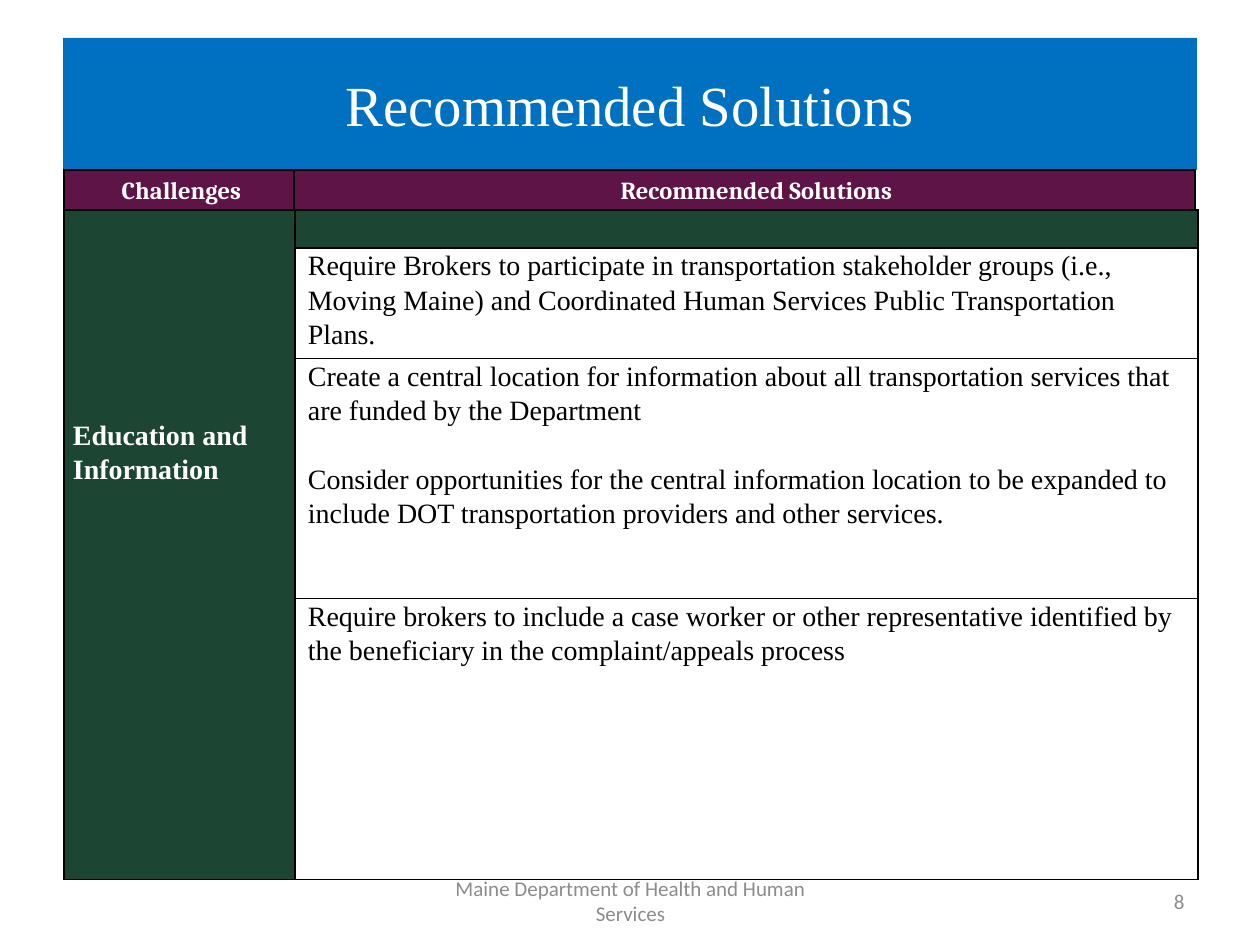
"""Build the Recommended Solutions slide with its header strip and solutions table."""
from dataclasses import dataclass

from lxml.etree import SubElement
from pptx import Presentation
from pptx.dml.color import RGBColor as Color
from pptx.enum.text import MSO_ANCHOR as Anchor, MSO_AUTO_SIZE as AutoSize, PP_ALIGN as Align
from pptx.oxml.ns import qn
from pptx.util import Pt

PX = 914400 // 126


@dataclass(frozen=True)
class Theme:
    blue: str = "0070C0"
    plum: str = "5F1448"
    green: str = "1D4533"
    white: str = "FFFFFF"
    black: str = "000000"
    grey: str = "8C8C8C"
    serif: str = "Times New Roman"
    header_font: str = "Cambria"
    footer_font: str = "Calibri"
    title_size: float = 32.4
    body_size: float = 16
    header_size: float = 14
    footer_size: float = 12


THEME = Theme()
TITLE = "Recommended Solutions"
TITLE_BOX = (63, 38, 1134, 132)
HEADERS = [("Challenges", 5), ("Recommended Solutions", 24)]
CHALLENGE = "Education and Information"
SOLUTIONS = [
    ["Require Brokers to participate in transportation stakeholder groups (i.e., "
     "Moving Maine) and Coordinated Human Services Public Transportation Plans."],
    ["Create a central location for information about all transportation services "
     "that are funded by the Department",
     "Consider opportunities for the central information location to be expanded to "
     "include DOT transportation providers and other services."],
    ["Require brokers to include a case worker or other representative identified by "
     "the beneficiary in the complaint/appeals process"],
]
HEADER_GRID = (64, 170, [230, 901], [40])
BODY_GRID = (64, 210, [231, 903], [37, 108, 240, 274])
FOOTERS = [
    ("Maine Department of Health and Human Services", (431, 876, 399, 50), Align.CENTER),
    ("8", (903, 876, 294, 50), Align.RIGHT),
]
CELL_INSET = 9
SOLUTION_INDENT = 4
CHALLENGE_DROP = 207
PARAGRAPH_GAP = 19.5


def scaled(lengths):
    return [length * PX for length in lengths]


def write(frame, texts, font, size, color, bold=False, align=Align.LEFT, indent=0, spacing=1.0):
    for index, text in enumerate(texts):
        para = frame.paragraphs[0] if index == 0 else frame.add_paragraph()
        para.text = text
        para.alignment = align
        para.line_spacing = spacing
        if index:
            para.space_before = Pt(PARAGRAPH_GAP)
        if indent:
            para._p.get_or_add_pPr().set("marL", str(indent * PX))
        for span in para.runs:
            span.font.name, span.font.size, span.font.bold = font, Pt(size), bold
            span.font.color.rgb = Color.from_string(color)


def fill_solid(item, color):
    item.fill.solid()
    item.fill.fore_color.rgb = Color.from_string(color)


def outline(cell):
    properties = cell._tc.get_or_add_tcPr()
    for side in ("lnL", "lnR", "lnT", "lnB"):
        line = SubElement(properties, qn(f"a:{side}"), w=str(Pt(1)))
        paint = SubElement(line, qn("a:solidFill"))
        SubElement(paint, qn("a:srgbClr"), val=THEME.black)


def add_grid(page, left, top, widths, heights):
    frame = page.shapes.add_table(
        len(heights), len(widths), *scaled([left, top, sum(widths), sum(heights)]))
    table = frame.table
    table.first_row = table.horz_banding = False
    for column, width in zip(table.columns, scaled(widths)):
        column.width = width
    for row, height in zip(table.rows, scaled(heights)):
        row.height = height
    for cell in table.iter_cells():
        cell.margin_left = cell.margin_right = CELL_INSET * PX
        cell.margin_top = cell.margin_bottom = 0
        outline(cell)
        cell.fill.background()
    return table


def add_title(page):
    title = page.shapes.title
    title.left, title.top, title.width, title.height = scaled(TITLE_BOX)
    fill_solid(title, THEME.blue)
    title.text_frame.auto_size = AutoSize.NONE
    title.text_frame.vertical_anchor = Anchor.MIDDLE
    write(title.text_frame, [TITLE], THEME.serif, THEME.title_size, THEME.white,
          align=Align.CENTER)


def add_header(page):
    table = add_grid(page, *HEADER_GRID)
    for cell, (text, indent) in zip(table.iter_cells(), HEADERS):
        fill_solid(cell, THEME.plum)
        cell.vertical_anchor = Anchor.MIDDLE
        write(cell.text_frame, [text], THEME.header_font, THEME.header_size, THEME.white,
              bold=True, align=Align.CENTER, indent=indent, spacing=1.1)


def add_solutions(page):
    table = add_grid(page, *BODY_GRID)
    challenge = table.cell(0, 0)
    challenge.merge(table.cell(len(SOLUTIONS), 0))
    challenge.margin_top = CHALLENGE_DROP * PX
    for cell in (challenge, table.cell(0, 1)):
        fill_solid(cell, THEME.green)
    write(challenge.text_frame, [CHALLENGE], THEME.serif, THEME.body_size, THEME.white,
          bold=True, spacing=1.1)
    for row, texts in enumerate(SOLUTIONS, start=1):
        write(table.cell(row, 1).text_frame, texts, THEME.serif, THEME.body_size,
              THEME.black, indent=SOLUTION_INDENT, spacing=1.1)


def add_footers(page):
    for text, place, align in FOOTERS:
        frame = page.shapes.add_textbox(*scaled(place)).text_frame
        frame.word_wrap = True
        frame.vertical_anchor = Anchor.MIDDLE
        write(frame, [text], THEME.footer_font, THEME.footer_size, THEME.grey, align=align)


def main():
    deck = Presentation()
    deck.slide_width, deck.slide_height = scaled([1260, 945])
    page = deck.slides.add_slide(deck.slide_layouts[5])
    add_footers(page)
    add_title(page)
    add_solutions(page)
    add_header(page)
    deck.save("out.pptx")


if __name__ == "__main__":
    main()
